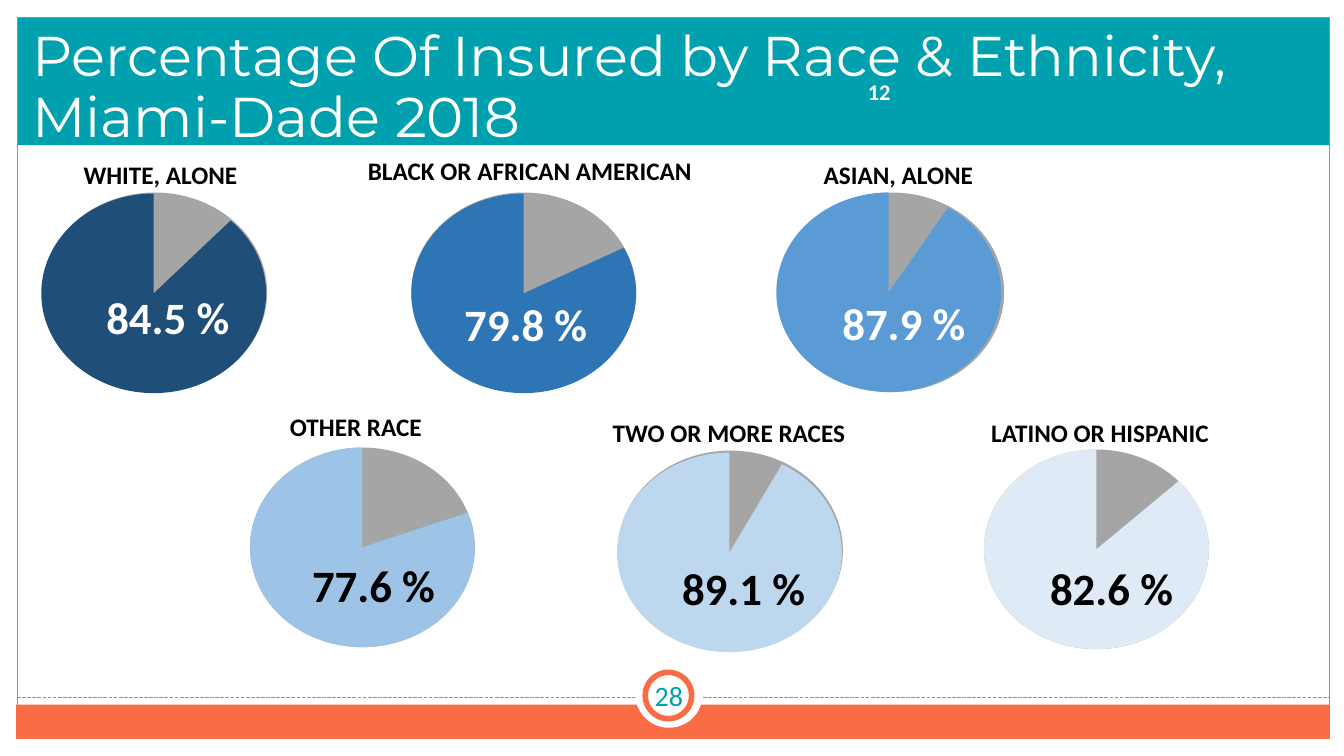
from pptx import Presentation
from pptx.dml.color import RGBColor
from pptx.enum.dml import MSO_LINE
from pptx.enum.shapes import MSO_CONNECTOR, MSO_SHAPE
from pptx.enum.text import MSO_ANCHOR, PP_ALIGN
from pptx.oxml.ns import qn
from pptx.util import Inches, Pt
from lxml import etree

TITLE = "Percentage Of Insured by Race & Ethnicity, Miami-Dade 2018"
NOTE = "12"
PAGE = "28"
COLORS = {
    "teal": "00A0AF", "coral": "F96C45", "white": "FFFFFF",
    "black": "000000", "gray": "A5A5A5",
}
SIZE = (2.23, 1.98)  # width and height of every pie

# label, label box (left, top, width), share, share place, share color,
# disc place, pie place, pie color, angle where the pie starts
GROUPS = [
    ("WHITE, ALONE", (0.73, 1.53, 1.99), "84.5 %", (0.88, 2.83), "white",
     (0.42, 1.91), (0.41, 1.92), "1F4E79", 316.59),
    ("BLACK OR AFRICAN AMERICAN", (3.53, 1.49, 3.45), "79.8 %", (4.43, 2.89), "white",
     (4.08, 1.91), (4.08, 1.92), "2E75B6", 335.5),
    ("ASIAN, ALONE", (7.44, 1.53, 2.94), "87.9 %", (8.18, 2.88), "white",
     (7.73, 1.91), (7.7, 1.91), "5B9BD5", 305.03),
    ("OTHER RACE", (2.06, 4.03, 2.94), "77.6 %", (2.92, 5.48), "black",
     (2.48, 4.44), (2.48, 4.44), "9DC3E6", 341.73),
    ("TWO OR MORE RACES", (5.76, 4.09, 2.94), "89.1 %", (6.59, 5.51), "black",
     (6.13, 4.47), (6.12, 4.49), "BDD7EE", 300.81),
    ("LATINO OR HISPANIC", (9.44, 4.09, 2.94), "82.6 %", (10.24, 5.51), "black",
     (9.76, 4.46), (9.76, 4.46), "DEEBF7", 320.29),
]

deck = Presentation()
deck.slide_width, deck.slide_height = Inches(13.33), Inches(7.5)
slide = deck.slides.add_slide(deck.slide_layouts[5])
shapes = slide.shapes


def rgb(name):
    return RGBColor.from_string(COLORS.get(name, name))


def draw(kind, box, fill=None, line=None, width=0.75):
    part = shapes.add_shape(kind, *map(Inches, box))
    part.shadow.inherit = False
    if fill:
        part.fill.solid()
        part.fill.fore_color.rgb = rgb(fill)
    else:
        part.fill.background()
    if line:
        part.line.color.rgb = rgb(line)
        part.line.width = Pt(width)
    else:
        part.line.fill.background()
    return part


def style(par, size, color, face="Calibri", bold=False, align=PP_ALIGN.CENTER):
    par.alignment = align
    par.font.name, par.font.size, par.font.bold = face, Pt(size), bold
    par.font.color.rgb = rgb(color)


def write(text, box, size, color, bold=True, align=PP_ALIGN.CENTER):
    frame = shapes.add_textbox(*map(Inches, box)).text_frame
    frame.word_wrap = True
    frame.text = text
    style(frame.paragraphs[0], size, color, bold=bold, align=align)
    return frame


# Bands, frame and dashed rule
draw(MSO_SHAPE.RECTANGLE, (0.17, 0.18, 13.02, 1.26), "teal")
draw(MSO_SHAPE.RECTANGLE, (0.16, 6.99, 13.02, 0.34), "coral")
draw(MSO_SHAPE.RECTANGLE, (0.17, 0.17, 13.02, 7.16), line="coral")
rule = shapes.add_connector(
    MSO_CONNECTOR.STRAIGHT, Inches(0.17), Inches(6.92), Inches(13.18), Inches(6.92))
rule.line.color.rgb = rgb("coral")
rule.line.width = Pt(0.9)
rule.line.dash_style = MSO_LINE.SQUARE_DOT
etree.SubElement(rule.element.spPr, qn("a:effectLst"))

# Page number badge
draw(MSO_SHAPE.OVAL, (6.3, 6.55, 0.67, 0.67), "white")
draw(MSO_SHAPE.OVAL, (6.4, 6.67, 0.46, 0.46), "white", "coral", 4)
badge = write(PAGE, (6.21, 6.66, 0.85, 0.48), 20, "teal", bold=False)
badge.vertical_anchor = MSO_ANCHOR.MIDDLE

# Title, raised above the teal band
title = shapes.title
title.left, title.top, title.width, title.height = map(Inches, (0.22, 0.23, 12.92, 1.45))
title.text_frame.text = TITLE
title.text_frame.word_wrap = True
title.text_frame.vertical_anchor = MSO_ANCHOR.TOP
head = title.text_frame.paragraphs[0]
head.line_spacing = 0.9
style(head, 40, "white", "Montserrat", align=PP_ALIGN.LEFT)
title.element.getparent().append(title.element)

# Pies: gray disc, colored share, figure and label
for label, place, share, spot, ink, disc, slot, color, angle in GROUPS:
    draw(MSO_SHAPE.OVAL, disc + SIZE, "gray")
    pie = draw(MSO_SHAPE.PIE, slot + SIZE, color)
    for i, turn in enumerate((angle, 270)):
        pie.adjustments[i] = turn * 0.6  # 60000 units a degree, in 100000ths
    write(share, spot + (1.57, 0.64), 32, ink)
    side = PP_ALIGN.LEFT if label == "WHITE, ALONE" else PP_ALIGN.CENTER
    write(label, place + (0.4,), 18, "black", align=side)

# Reference mark
write(NOTE, (8.35, 0.73, 0.74, 0.37), 16, "white")

deck.save("out.pptx")
